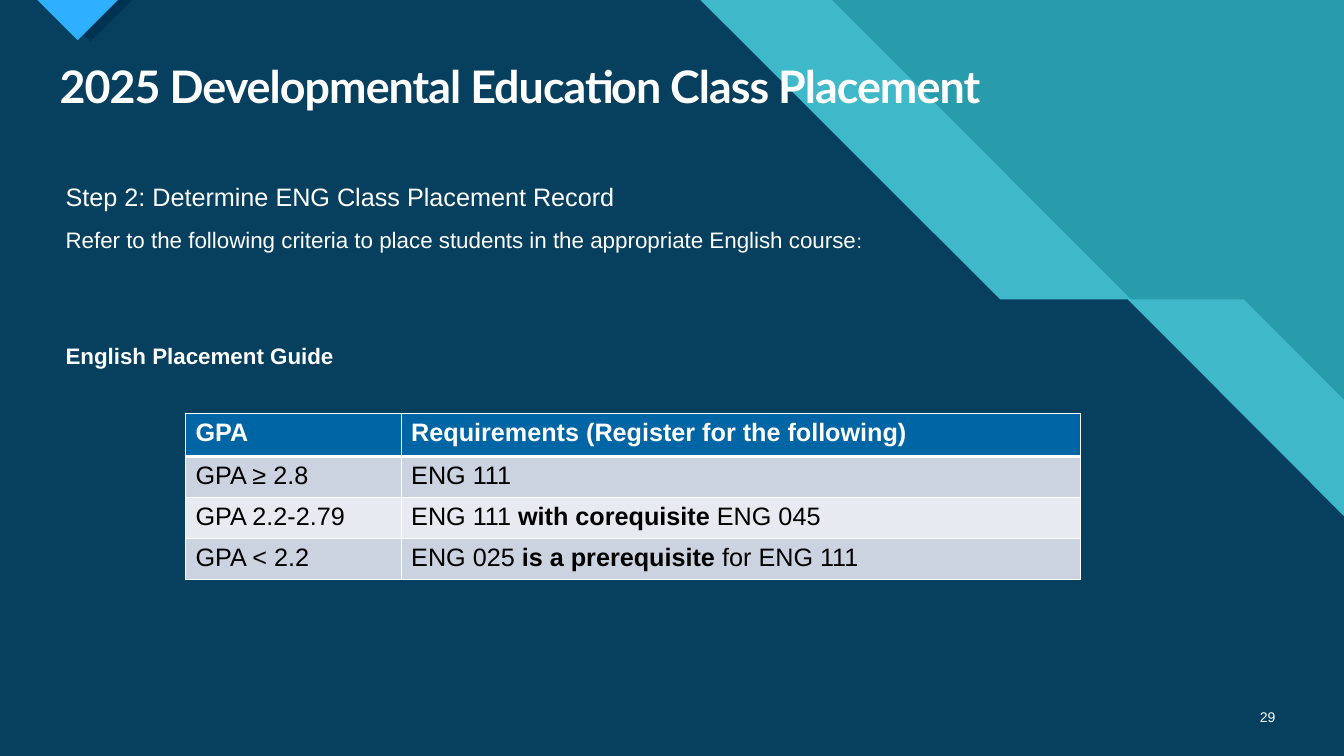
import dataclasses
import typing

import lxml.etree
import pptx
import pptx.dml.color
import pptx.enum.text
import pptx.oxml.ns
import pptx.util

WIDTH = pptx.util.Inches(13.333)
HEIGHT = pptx.util.Inches(7.5)
COLOURS = {
    "teal": "299CAB",
    "light teal": "3FB9C9",
    "navy": "06405E",
    "shade": "003352",
    "marker": "2FAFFF",
    "header": "0065A4",
    "odd row": "CCD3E0",
    "even row": "E7EAF0",
    "white": "FFFFFF",
    "black": "000000",
}


@dataclasses.dataclass(frozen=True)
class Area:
    """A rectangle in percent of the slide's width and height."""
    left: float
    top: float
    width: float
    height: float


@dataclasses.dataclass(frozen=True)
class Panel:
    """A filled outline with its corners in percent of the slide."""
    colour: str
    corners: tuple[tuple[float, float], ...]


@dataclasses.dataclass(frozen=True)
class Line:
    text: str
    size: float
    bold: bool = False
    before: float = 6


@dataclasses.dataclass(frozen=True)
class Placement:
    """One table row: the grade range and (text, bold) spans of the requirement."""
    grade: str
    requirement: tuple[tuple[str, bool], ...]


PANELS = (
    Panel("light teal", ((0, 0), (61.9, 0), (84.15, 39.6), (92.55, 39.6),
                         (100, 52.9), (100, 100), (0, 100))),
    Panel("navy", ((0, 0), (52.1, 0), (74.4, 39.6), (83.9, 39.6),
                   (100, 68.3), (100, 100), (0, 100))),
    Panel("shade", ((3.6, 0), (9.83, 0), (6.75, 5.47))),
    Panel("marker", ((2.78, 0), (8.78, 0), (5.78, 5.33))),
)
TITLE_AREA = Area(3.68, 7.87, 91.95, 7.87)
BODY_AREA = Area(3.68, 23.33, 95.2, 59.73)
NUMBER_AREA = Area(92.33, 92.13, 3.3, 5.33)
TABLE_AREA = Area(13.8, 54.67, 66.6, 21.99)
COLUMN_SHARES = (16.05, 50.55)
ROW_SHARES = (5.7, 5.43, 5.43, 5.43)
LINES = (
    Line("Step 2: Determine ENG Class Placement Record", 18),
    Line("Refer to the following criteria to place students in the appropriate English course", 16),
    Line("English Placement Guide", 16, bold=True, before=60),
)
PLACEMENTS = (
    Placement("GPA", (("Requirements (Register for the following)", True),)),
    Placement("GPA ≥ 2.8", (("ENG 111", False),)),
    Placement("GPA 2.2-2.79", (("ENG 111 ", False), ("with corequisite", True),
                               (" ENG 045", False))),
    Placement("GPA < 2.2", (("ENG 025 ", False), ("is a prerequisite ", True),
                            ("for ENG 111", False))),
)


def across(percent: float) -> int:
    return round(WIDTH * percent / 100)


def down(percent: float) -> int:
    return round(HEIGHT * percent / 100)


def bounds(area: Area) -> tuple[int, int, int, int]:
    return across(area.left), down(area.top), across(area.width), down(area.height)


def colour(name: str) -> pptx.dml.color.RGBColor:
    return pptx.dml.color.RGBColor.from_string(COLOURS[name])


def paint(fill: typing.Any, name: str) -> None:
    fill.solid()
    fill.fore_color.rgb = colour(name)


def add_span(para: typing.Any, text: str, *, size: float, font: str = "Arial",
             ink: str = "white", bold: bool = False, tracking: int = 0) -> None:
    """Append formatted text; tracking is in hundredths of a point."""
    span = para.add_run()
    span.text = text
    span.font.size = pptx.util.Pt(size)
    span.font.name = font
    span.font.bold = bold
    span.font.color.rgb = colour(ink)
    if tracking:
        span.font._element.set("spc", str(tracking))


def draw_panel(page: typing.Any, panel: Panel) -> None:
    corners = [(across(x), down(y)) for x, y in panel.corners]
    builder = page.shapes.build_freeform(*corners[0])
    builder.add_line_segments(corners[1:], close=True)
    shape = builder.convert_to_shape()
    shape.shadow.inherit = False
    paint(shape.fill, panel.colour)
    shape.line.fill.background()


def settle(box: typing.Any, area: Area, anchor: typing.Any) -> typing.Any:
    """Place a text shape and return its frame."""
    box.left, box.top, box.width, box.height = bounds(area)
    frame = box.text_frame
    frame.word_wrap = True
    frame.auto_size = pptx.enum.text.MSO_AUTO_SIZE.NONE
    frame.vertical_anchor = anchor
    return frame


def write_title(page: typing.Any) -> None:
    frame = settle(page.shapes.title, TITLE_AREA, pptx.enum.text.MSO_ANCHOR.TOP)
    para = frame.paragraphs[0]
    para.alignment = pptx.enum.text.PP_ALIGN.LEFT
    para.line_spacing = 0.9
    add_span(para, "2025 Developmental Education Class Placement",
             size=32, font="Lato", bold=True, tracking=-70)


def write_body(page: typing.Any) -> None:
    frame = settle(page.placeholders[1], BODY_AREA, pptx.enum.text.MSO_ANCHOR.TOP)
    for index, line in enumerate(LINES):
        para = frame.add_paragraph() if index else frame.paragraphs[0]
        para.space_before = pptx.util.Pt(line.before)
        para.space_after = pptx.util.Pt(4)
        add_span(para, line.text, size=line.size, bold=line.bold)
        properties = para._p.get_or_add_pPr()
        properties.set("marL", str(pptx.util.Inches(0.06)))
        properties.set("indent", "0")
        lxml.etree.SubElement(properties, pptx.oxml.ns.qn("a:buNone"))
    add_span(frame.paragraphs[1], ":", size=14)


def write_number(page: typing.Any) -> None:
    box = page.shapes.add_textbox(*bounds(NUMBER_AREA))
    frame = settle(box, NUMBER_AREA, pptx.enum.text.MSO_ANCHOR.MIDDLE)
    frame.paragraphs[0].alignment = pptx.enum.text.PP_ALIGN.RIGHT
    add_span(frame.paragraphs[0], "29", size=10)


def rule_cell(cell: typing.Any, widths: dict[str, float]) -> None:
    """Add white borders, keyed by side (L, R, T, B) in points."""
    properties = cell._tc.get_or_add_tcPr()
    for side, width in widths.items():
        border = lxml.etree.SubElement(properties, pptx.oxml.ns.qn(f"a:ln{side}"),
                                       w=str(pptx.util.Pt(width)))
        fill = lxml.etree.SubElement(border, pptx.oxml.ns.qn("a:solidFill"))
        lxml.etree.SubElement(fill, pptx.oxml.ns.qn("a:srgbClr"), val=COLOURS["white"])


def draw_table(page: typing.Any) -> None:
    table = page.shapes.add_table(len(PLACEMENTS), len(COLUMN_SHARES),
                                  *bounds(TABLE_AREA)).table
    for column, share in zip(table.columns, COLUMN_SHARES):
        column.width = across(share)
    for index, placement in enumerate(PLACEMENTS):
        table.rows[index].height = down(ROW_SHARES[index])
        header = index == 0
        band = "header" if header else "odd row" if index % 2 else "even row"
        widths = {"L": 1, "R": 1, "T": 3 if index == 1 else 1, "B": 3 if header else 1}
        contents = (((placement.grade, header),), placement.requirement)
        for cell, spans in zip(table.rows[index].cells, contents):
            rule_cell(cell, widths)
            paint(cell.fill, band)
            for text, bold in spans:
                add_span(cell.text_frame.paragraphs[0], text, size=18, bold=bold,
                         ink="white" if header else "black")


def main() -> None:
    deck = pptx.Presentation()
    deck.slide_width, deck.slide_height = WIDTH, HEIGHT
    page = deck.slides.add_slide(deck.slide_layouts[1])
    paint(page.background.fill, "teal")
    for panel in PANELS:
        draw_panel(page, panel)
    # Panels lie behind the text placeholders.
    for placeholder in list(page.placeholders):
        page.shapes._spTree.append(placeholder._element)
    write_title(page)
    write_body(page)
    write_number(page)
    draw_table(page)
    deck.save("out.pptx")


if __name__ == "__main__":
    main()
